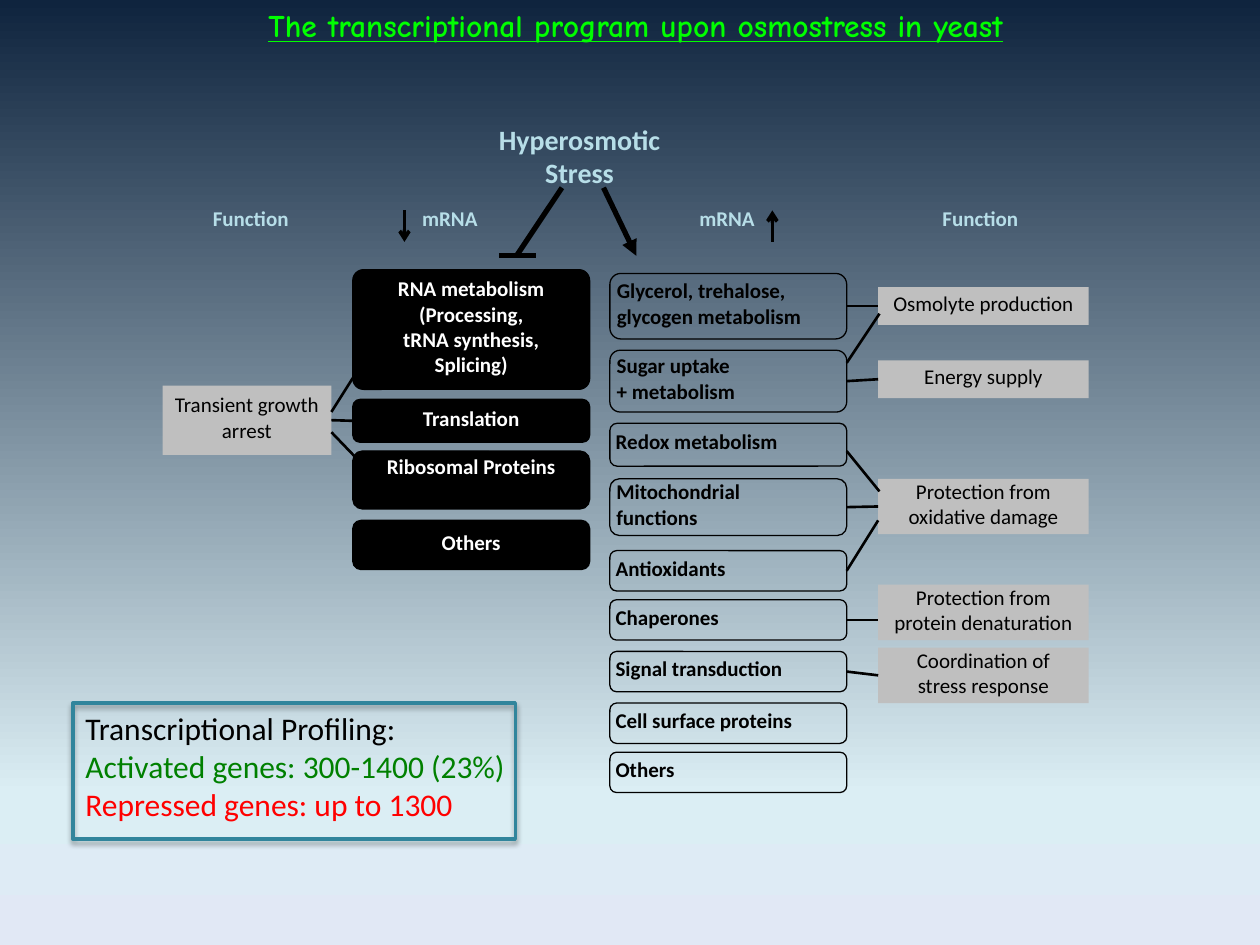
from lxml import etree
from pptx import Presentation
from pptx.dml.color import RGBColor
from pptx.enum.shapes import MSO_CONNECTOR, MSO_SHAPE
from pptx.enum.text import MSO_ANCHOR, PP_ALIGN
from pptx.oxml.ns import qn
from pptx.util import Inches, Pt

RECT, ROUNDED = MSO_SHAPE.RECTANGLE, MSO_SHAPE.ROUNDED_RECTANGLE
STRAIGHT = MSO_CONNECTOR.STRAIGHT
LEFT, CENTER = PP_ALIGN.LEFT, PP_ALIGN.CENTER
TOP, MIDDLE = MSO_ANCHOR.TOP, MSO_ANCHOR.MIDDLE
LEFT_SIDE, RIGHT_SIDE = 1, 3

COLORS = {
    "black": "000000", "white": "FFFFFF", "gray": "BFBFBF",
    "pale": "B7DEE8", "teal": "31859C", "lime": "00FF00",
    "green": "008000", "red": "FF0000",
}
BACKGROUND = [(0, "0F243E"), (84, "DBEEF4"), (100, "E1E8F5")]

REPRESSED_X, INDUCED_X, GENE_WIDTH = 2.8, 4.84, 1.88
FUNCTION_X, FUNCTION_WIDTH = 6.97, 1.67

# name: (top, height, text)
REPRESSED = {
    "rna": (2.14, 0.95, "RNA metabolism\n(Processing,\ntRNA synthesis,\nSplicing)"),
    "translation": (3.17, 0.34, "Translation"),
    "ribosome": (3.58, 0.46, "Ribosomal Proteins"),
    "others": (4.13, 0.39, "Others"),
}
INDUCED = {
    "glycerol": (2.17, 0.52, "Glycerol, trehalose,\nglycogen metabolism"),
    "sugar": (2.78, 0.49, "Sugar uptake\n+ metabolism"),
    "redox": (3.36, 0.34, "Redox metabolism"),
    "mitochondria": (3.8, 0.45, "Mitochondrial\nfunctions"),
    "antioxidants": (4.37, 0.32, "Antioxidants"),
    "chaperones": (4.76, 0.32, "Chaperones"),
    "signal": (5.17, 0.32, "Signal transduction"),
    "surface": (5.58, 0.32, "Cell surface proteins"),
    "others": (5.97, 0.32, "Others"),
}
FUNCTIONS = {
    "osmolyte": (2.28, 0.3, "Osmolyte production"),
    "energy": (2.86, 0.3, "Energy supply"),
    "oxidative": (3.8, 0.44, "Protection from\noxidative damage"),
    "denaturation": (4.64, 0.44, "Protection from\nprotein denaturation"),
    "coordination": (5.14, 0.44, "Coordination of\nstress response"),
}
LEVEL_LINKS = [("glycerol", "osmolyte"), ("sugar", "energy"),
               ("mitochondria", "oxidative"), ("signal", "coordination")]
OTHER_LINKS = [
    (6.72, 4.92, 6.97, 4.92), (6.72, 4.53, 6.97, 4.13),
    (6.72, 3.58, 6.98, 3.9), (6.72, 2.88, 6.98, 2.49),
    (2.63, 3.27, 2.8, 3), (2.63, 3.43, 2.88, 3.69),
]
HEADINGS = [(1.05, "Function"), (2.63, "mRNA"), (4.83, "mRNA"), (6.84, "Function")]


def rgb(name):
    return RGBColor.from_string(COLORS[name])


def write(shape, text, colors=("black",), size=12, bold=False, underline=False,
          font="Calibri", align=CENTER, anchor=TOP, insets=(0.1, 0.05, 0.1, 0.05)):
    """Fill a shape with one paragraph per line; the last colour repeats."""
    frame = shape.text_frame
    frame.word_wrap = True
    frame.vertical_anchor = anchor
    (frame.margin_left, frame.margin_top,
     frame.margin_right, frame.margin_bottom) = map(Inches, insets)
    for i, line in enumerate(text.split("\n")):
        paragraph = frame.paragraphs[0] if i == 0 else frame.add_paragraph()
        paragraph.alignment = align
        run = paragraph.add_run()
        run.text = line
        run.font.name, run.font.size = font, Pt(size)
        run.font.bold, run.font.underline = bold, underline
        run.font.color.rgb = rgb(colors[min(i, len(colors) - 1)])


def add_label(slide, x, y, width, height, text, **style):
    label = slide.shapes.add_textbox(*map(Inches, (x, y, width, height)))
    write(label, text, **style)


def add_box(slide, kind, x, y, width, height, fill=None, line=None, weight=0.75):
    box = slide.shapes.add_shape(kind, *map(Inches, (x, y, width, height)))
    box.shadow.inherit = False
    if fill:
        box.fill.solid()
        box.fill.fore_color.rgb = rgb(fill)
    else:
        box.fill.background()
    if line:
        box.line.color.rgb = rgb(line)
        box.line.width = Pt(weight)
    else:
        box.line.fill.background()
    return box


def add_column(slide, kind, x, width, entries, box_style, **text_style):
    """Stack labelled boxes and return them by name."""
    boxes = {}
    for name, (top, height, text) in entries.items():
        boxes[name] = add_box(slide, kind, x, top, width, height, **box_style)
        write(boxes[name], text, anchor=MIDDLE, insets=(0.03, 0, 0.03, 0.05), **text_style)
    return boxes


def add_line(slide, x1, y1, x2, y2, weight=1.5, arrow=None):
    line = slide.shapes.add_connector(STRAIGHT, *map(Inches, (x1, y1, x2, y2)))
    line.line.color.rgb = rgb("black")
    line.line.width = Pt(weight)
    if arrow:
        etree.SubElement(line.line._get_or_add_ln(), qn("a:tailEnd"), type=arrow)
    etree.SubElement(line._element.spPr, qn("a:effectLst"))
    return line


def link(slide, left_box, right_box):
    line = add_line(slide, 0, 0, 1, 1)
    line.begin_connect(left_box, RIGHT_SIDE)
    line.end_connect(right_box, LEFT_SIDE)


def add_shadow(shape):
    effects = shape._element.spPr.find(qn("a:effectLst"))
    shadow = etree.SubElement(effects, qn("a:outerShdw"), blurRad=str(Pt(3.1)),
                              dist=str(Pt(1.8)), dir="5400000", rotWithShape="0")
    color = etree.SubElement(shadow, qn("a:srgbClr"), val=COLORS["black"])
    etree.SubElement(color, qn("a:alpha"), val="35000")


def paint_background(slide):
    fill = slide.background.fill
    fill.gradient()
    fill.gradient_angle = 270
    stops = next(slide._element.iter(qn("a:gsLst")))
    for stop in list(stops):
        stops.remove(stop)
    for percent, color in BACKGROUND:
        stop = etree.SubElement(stops, qn("a:gs"), pos=str(percent * 1000))
        etree.SubElement(stop, qn("a:srgbClr"), val=color)


def add_stress_signal(slide):
    add_label(slide, 3.85, 0.92, 1.5, 0.64, "Hyperosmotic\nStress",
              colors=["pale"], size=16, bold=True)
    add_line(slide, 4.46, 1.49, 4.1, 2.03, weight=3)
    add_line(slide, 3.96, 2.03, 4.25, 2.03, weight=3)
    add_line(slide, 4.79, 1.49, 5.05, 2.03, weight=3, arrow="triangle")
    for x, text in HEADINGS:
        add_label(slide, x, 1.58, 1.88, 0.3, text, colors=["pale"], bold=True)
    add_line(slide, 3.21, 1.67, 3.21, 1.92, weight=2, arrow="arrow")
    add_line(slide, 6.13, 1.92, 6.13, 1.67, weight=2, arrow="arrow")


def add_profiling_summary(slide):
    add_label(slide, 0.58, 5.58, 3.54, 1,
              "Transcriptional Profiling:\nActivated genes: 300-1400 (23%)\n"
              "Repressed genes: up to 1300",
              colors=["black", "green", "red"], size=18, align=LEFT,
              insets=(0.1, 0.05, 0, 0.05))
    add_shadow(add_box(slide, RECT, 0.58, 5.58, 3.51, 1.08, line="teal", weight=2))


def main():
    deck = Presentation()
    deck.slide_width, deck.slide_height = Inches(10), Inches(7.5)
    slide = deck.slides.add_slide(deck.slide_layouts[6])
    paint_background(slide)
    add_label(slide, 1.68, 0, 6.73, 0.4,
              "The transcriptional program upon osmostress in yeast",
              colors=["lime"], size=18, bold=True, underline=True, font="Comic Neue")
    add_stress_signal(slide)

    repressed = add_column(slide, ROUNDED, REPRESSED_X, GENE_WIDTH, REPRESSED,
                           {"fill": "black", "line": "black"}, colors=["white"], bold=True)
    repressed["rna"].adjustments[0] = 0.09
    repressed["ribosome"].text_frame.vertical_anchor = TOP
    induced = add_column(slide, ROUNDED, INDUCED_X, GENE_WIDTH, INDUCED,
                         {"line": "black"}, bold=True, align=LEFT)
    functions = add_column(slide, RECT, FUNCTION_X, FUNCTION_WIDTH, FUNCTIONS,
                           {"fill": "gray"})
    growth = add_column(slide, RECT, 1.29, 1.34,
                        {"arrest": (3.06, 0.55, "Transient growth\narrest")},
                        {"fill": "gray"})

    for gene, function in LEVEL_LINKS:
        link(slide, induced[gene], functions[function])
    link(slide, growth["arrest"], repressed["translation"])
    for ends in OTHER_LINKS:
        add_line(slide, *ends)
    add_profiling_summary(slide)
    deck.save("out.pptx")


if __name__ == "__main__":
    main()
